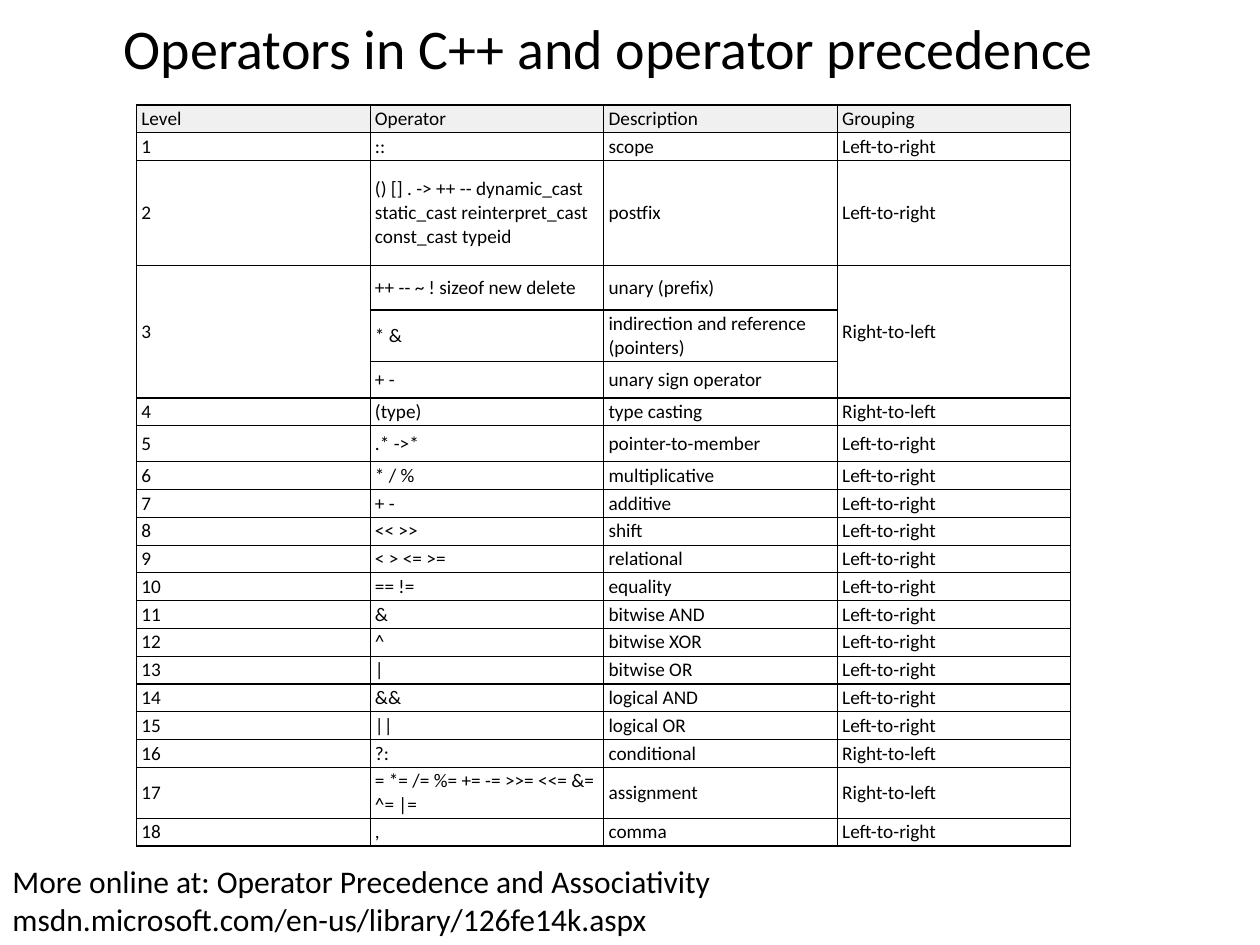
from dataclasses import dataclass

from lxml import etree
from pptx import Presentation
from pptx import util as u
from pptx.dml.color import RGBColor
from pptx.enum import text
from pptx.oxml import ns


@dataclass(frozen=True)
class Theme:
    font: str = "Calibri"
    ink: str = "000000"
    header_fill: str = "F0F0F0"
    body_fill: str = "FFFFFF"
    title_size: float = 32
    note_size: float = 18
    table_size: float = 11
    border_width: float = 0.75


theme = Theme()
Pt = u.Pt


def format_runs(text_frame, size):
    for paragraph in text_frame.paragraphs:
        for run in paragraph.runs:
            run.font.name = theme.font
            run.font.size = Pt(size)
            run.font.color.rgb = RGBColor.from_string(theme.ink)


def add_borders(cell):
    properties = cell._tc.get_or_add_tcPr()
    for side in ("a:lnL", "a:lnR", "a:lnT", "a:lnB"):
        line = etree.SubElement(properties, ns.qn(side), w=str(Pt(theme.border_width)))
        fill = etree.SubElement(line, ns.qn("a:solidFill"))
        etree.SubElement(fill, ns.qn("a:srgbClr"), val=theme.ink)


presentation = Presentation()
presentation.slide_width = Pt(720)
presentation.slide_height = Pt(540)
slide = presentation.slides.add_slide(presentation.slide_layouts[5])

# Title
title = slide.shapes.title
title.left, title.top, title.width, title.height = Pt(12), Pt(0), Pt(672), Pt(54)
title.text_frame.text = "Operators in C++ and operator precedence"
title.text_frame.vertical_anchor = text.MSO_ANCHOR.MIDDLE
title.text_frame.paragraphs[0].alignment = text.PP_ALIGN.CENTER
format_runs(title.text_frame, theme.title_size)

# Further reading
note = slide.shapes.add_textbox(Pt(0), Pt(489), Pt(522), Pt(51))
note.text_frame.word_wrap = True
note.text_frame.text = (
    "More online at: Operator Precedence and Associativity\n"
    "msdn.microsoft.com/en-us/library/126fe14k.aspx"
)
format_runs(note.text_frame, theme.note_size)

# Precedence table: level, operators, description, grouping
LEFT, RIGHT = "Left-to-right", "Right-to-left"
rows = [
    ("Level", "Operator", "Description", "Grouping"),
    ("1", "::", "scope", LEFT),
    ("2", "() [] . -> ++ -- dynamic_cast static_cast reinterpret_cast const_cast typeid",
     "postfix", LEFT),
    ("3", "++ -- ~ ! sizeof new delete", "unary (prefix)", RIGHT),
    ("", "* &", "indirection and reference (pointers)", ""),
    ("", "+ -", "unary sign operator", ""),
    ("4", "(type)", "type casting", RIGHT),
    ("5", ".* ->*", "pointer-to-member", LEFT),
    ("6", "* / %", "multiplicative", LEFT),
    ("7", "+ -", "additive", LEFT),
    ("8", "<< >>", "shift", LEFT),
    ("9", "< > <= >=", "relational", LEFT),
    ("10", "== !=", "equality", LEFT),
    ("11", "&", "bitwise AND", LEFT),
    ("12", "^", "bitwise XOR", LEFT),
    ("13", "|", "bitwise OR", LEFT),
    ("14", "&&", "logical AND", LEFT),
    ("15", "||", "logical OR", LEFT),
    ("16", "?:", "conditional", RIGHT),
    ("17", "= *= /= %= += -= >>= <<= &= ^= |=", "assignment", RIGHT),
    ("18", ",", "comma", LEFT),
]
row_height = 15.9
tall_rows = {2: 60, 3: 25.4, 4: 29.7, 5: 20.6, 7: 20.6, 19: 29.1}

frame = slide.shapes.add_table(len(rows), 4, Pt(78), Pt(60), Pt(534), Pt(424))
table = frame.table
table.first_row = False
table.horz_banding = False
for column in table.columns:
    column.width = Pt(133.5)

for row_index, values in enumerate(rows):
    table.rows[row_index].height = Pt(tall_rows.get(row_index, row_height))
    fill_color = theme.body_fill if row_index else theme.header_fill
    for column_index, value in enumerate(values):
        cell = table.cell(row_index, column_index)
        cell.margin_left = cell.margin_right = Pt(2.8)
        cell.margin_top = cell.margin_bottom = Pt(1.2)
        cell.vertical_anchor = text.MSO_ANCHOR.MIDDLE
        add_borders(cell)
        cell.fill.solid()
        cell.fill.fore_color.rgb = RGBColor.from_string(fill_color)
        cell.text_frame.text = value
        format_runs(cell.text_frame, theme.table_size)

# Level 3 shares its number and grouping across three rows
for column_index in (0, 3):
    table.cell(3, column_index).merge(table.cell(5, column_index))

presentation.save("out.pptx")
